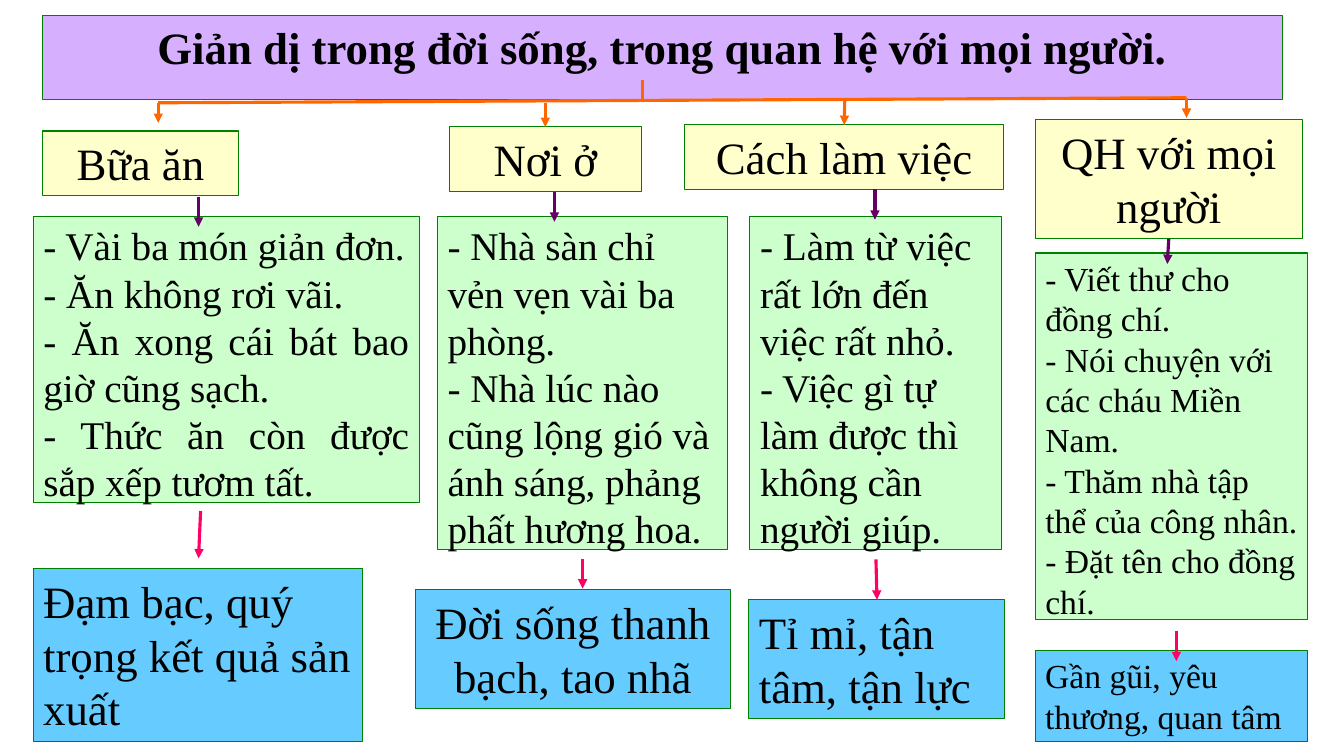
from dataclasses import dataclass

from lxml import etree
from pptx import Presentation
from pptx import util as u
from pptx.dml.color import RGBColor
from pptx.enum import shapes, text
from pptx.oxml import ns

COLUMNS, ROWS = 133.33, 75
WIDTH, HEIGHT = u.Inches(13.33), u.Inches(7.5)
FONT = "Times New Roman"
LEFT, CENTER, JUSTIFY = text.PP_ALIGN.LEFT, text.PP_ALIGN.CENTER, text.PP_ALIGN.JUSTIFY
LILAC, CREAM, MINT, SKY = "D7AFFF", "FFFFCC", "CCFFCC", "66CCFF"
BLACK, GREEN = "000000", "008000"
ORANGE, PURPLE, PINK = "FF6600", "660066", "FF0066"


@dataclass(frozen=True)
class Card:
    column: float
    row: float
    columns: float
    rows: float
    lines: tuple[str, ...]
    size: int = 32
    align: text.PP_ALIGN = CENTER
    bold: bool = False


@dataclass(frozen=True)
class Arrow:
    start: tuple[float, float]
    end: tuple[float, float]
    from_middle: bool = False
    to_middle: bool = False


@dataclass(frozen=True)
class Branch:
    label: Card
    points: Card
    lesson: Card
    drop: Arrow
    to_points: Arrow
    to_lesson: Arrow


HEADING = Card(4.2, 1.5, 123, 6.4,
               ("Giản dị trong đời sống, trong quan hệ với mọi người.",), bold=True)
TRUNK = Arrow((63.7, 7.9), (63.7, 9.9))
RAIL = Arrow((15.7, 10.2), (117.7, 9.7))

BRANCHES = (
    Branch(
        Card(4.2, 13, 19.5, 6.4, ("Bữa ăn",)),
        Card(3.3, 21.5, 38.3, 29.3, (
            "- Vài ba món giản đơn.",
            "- Ăn không rơi vãi.",
            "- Ăn xong cái bát bao giờ cũng sạch.",
            "- Thức ăn còn được sắp xếp tươm tất.",
        ), 28, JUSTIFY),
        Card(3.3, 56.4, 32.7, 17.2, ("Đạm bạc, quý trọng kết quả sản xuất",), 32, LEFT),
        Arrow((15.7, 10.2), (15.7, 12.2)),
        Arrow((19.7, 19.5), (19.7, 22.5)),
        Arrow((19.9, 50.7), (19.7, 55.4)),
    ),
    Branch(
        Card(44.6, 12.6, 19, 6.4, ("Nơi ở",)),
        Card(43.4, 21.5, 28.8, 34, (
            "- Nhà sàn chỉ vẻn vẹn vài ba phòng.",
            "- Nhà lúc nào cũng lộng gió và ánh sáng, phảng phất hương hoa.",
        ), 28, LEFT),
        Card(41.2, 58.5, 31.3, 11.8, ("Đời sống thanh bạch, tao nhã",)),
        Arrow((54.1, 10.2), (54.1, 12.2), to_middle=True),
        Arrow((55, 19), (55, 22)),
        Arrow((57.8, 55.4), (57.8, 58.4), from_middle=True),
    ),
    Branch(
        Card(67.9, 12.4, 31.7, 6.4, ("Cách làm việc",)),
        Card(74.4, 21.5, 25, 34, (
            "- Làm từ việc rất lớn đến việc rất nhỏ.",
            "- Việc gì tự làm được thì không cần người giúp.",
        ), 28, LEFT),
        Card(74.3, 59.5, 25.4, 11.8, ("Tỉ mỉ, tận tâm, tận lực",), 32, LEFT),
        Arrow((83.8, 10), (83.8, 12), to_middle=True),
        Arrow((86.8, 18.8), (86.8, 21.8)),
        Arrow((86.9, 55.5), (86.8, 59.2), from_middle=True, to_middle=True),
    ),
    Branch(
        Card(102.7, 11.9, 26.5, 11.8, ("QH với mọi người",)),
        Card(102.7, 25.1, 27, 37.3, (
            "- Viết thư cho đồng chí.",
            "- Nói chuyện với các cháu Miền Nam.",
            "- Thăm nhà tập thể của công nhân.",
            "- Đặt tên cho đồng chí.",
        ), 24, LEFT),
        Card(102.7, 64.5, 27, 9.1, ("Gần gũi, yêu thương, quan tâm",), 24, LEFT),
        Arrow((117.7, 9.7), (117.7, 11.7)),
        Arrow((115.8, 23.7), (115.8, 26.2), from_middle=True),
        Arrow((116.7, 62.6), (116.7, 65.6)),
    ),
)


def color(value: str) -> RGBColor:
    return RGBColor.from_string(value)


def across(columns: float) -> int:
    return round(WIDTH * columns / COLUMNS)


def down(rows: float) -> int:
    return round(HEIGHT * rows / ROWS)


def fill_card(box, card: Card, fill: str):
    box.left, box.top = across(card.column), down(card.row)
    box.width, box.height = across(card.columns), down(card.rows)
    box.fill.solid()
    box.fill.fore_color.rgb = color(fill)
    box.line.color.rgb = color(GREEN)
    box.line.width = u.Pt(0.75)
    frame = box.text_frame
    frame.text = "\n".join(card.lines)
    frame.word_wrap = True
    frame.auto_size = text.MSO_AUTO_SIZE.SHAPE_TO_FIT_TEXT
    frame.vertical_anchor = text.MSO_ANCHOR.TOP
    for para in frame.paragraphs:
        properties = para._p.get_or_add_pPr()
        properties.set("marL", "0")
        properties.set("indent", "0")
        etree.SubElement(properties, ns.qn("a:buNone"))
        para.alignment = card.align
        para.space_before = u.Pt(0)
        para.font.name = FONT
        para.font.size = u.Pt(card.size)
        para.font.bold = card.bold
        para.font.color.rgb = color(BLACK)
    return box


def add_card(page, card: Card, fill: str):
    box = page.shapes.add_shape(shapes.MSO_SHAPE.RECTANGLE, 0, 0, 0, 0)
    box.shadow.inherit = False
    return fill_card(box, card, fill)


def add_line(page, arrow: Arrow, stroke: str, head: bool = True, above=None, below=None) -> None:
    line = page.shapes.add_connector(
        shapes.MSO_CONNECTOR.STRAIGHT,
        across(arrow.start[0]), down(arrow.start[1]),
        across(arrow.end[0]), down(arrow.end[1]),
    )
    if arrow.from_middle:
        line.begin_connect(above, 2)
    if arrow.to_middle:
        line.end_connect(below, 0)
    line.line.color.rgb = color(stroke)
    line.line.width = u.Pt(2.25)
    if head:
        etree.SubElement(line.line._get_or_add_ln(), ns.qn("a:tailEnd"), type="triangle")
    etree.SubElement(line._element.spPr, ns.qn("a:effectLst"))


def main() -> None:
    deck = Presentation()
    deck.slide_width, deck.slide_height = WIDTH, HEIGHT
    page = deck.slides.add_slide(deck.slide_layouts.get_by_name("Comparison"))
    title, *bodies = page.placeholders
    fill_card(title, HEADING, LILAC)
    add_line(page, RAIL, ORANGE, head=False)
    add_line(page, TRUNK, ORANGE, head=False)
    for branch, body in zip(BRANCHES, bodies):
        label = add_card(page, branch.label, CREAM)
        points = fill_card(body, branch.points, MINT)
        lesson = add_card(page, branch.lesson, SKY)
        add_line(page, branch.drop, ORANGE, below=label)
        add_line(page, branch.to_points, PURPLE, above=label, below=points)
        add_line(page, branch.to_lesson, PINK, above=points, below=lesson)
    deck.save("out.pptx")


if __name__ == "__main__":
    main()
